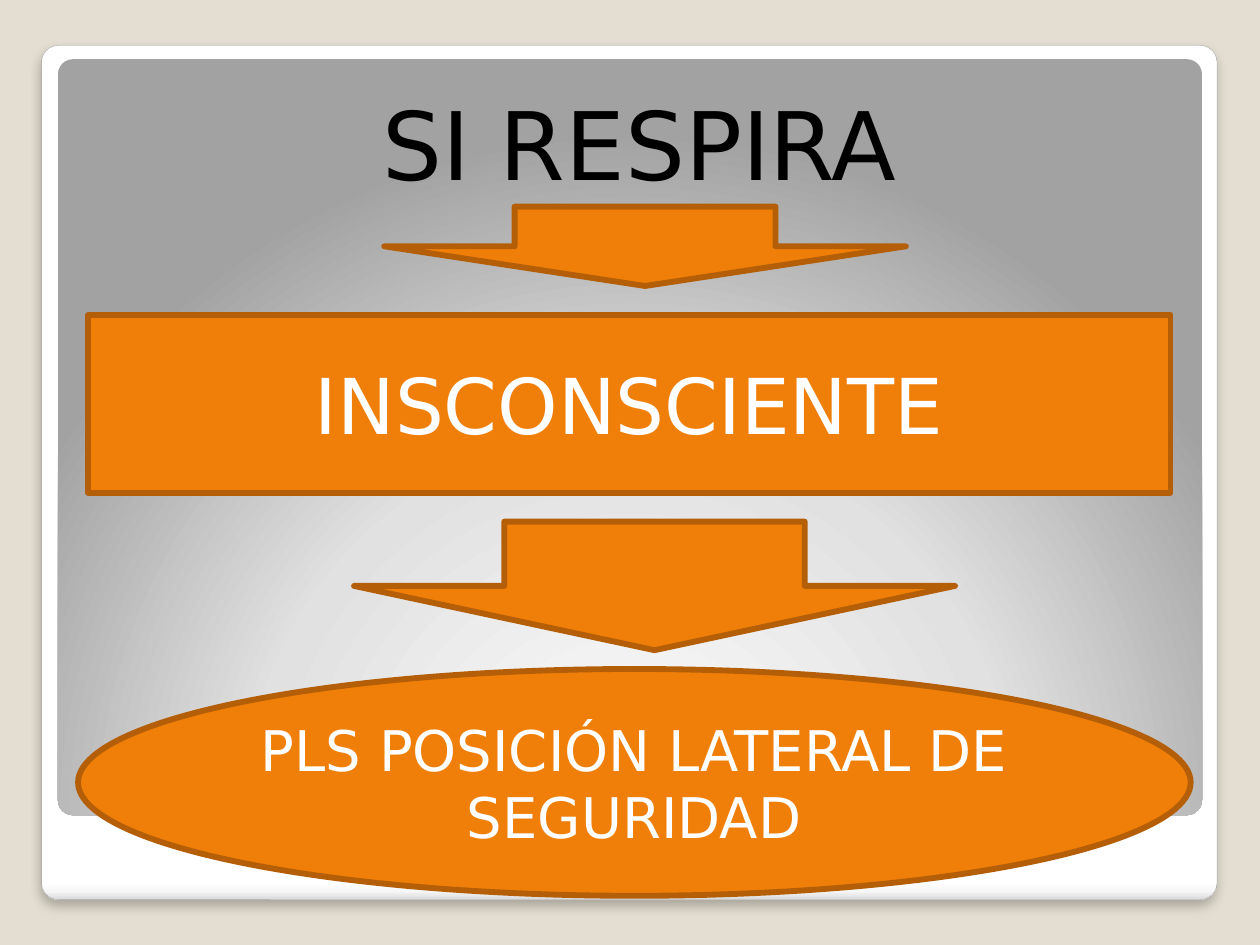
from dataclasses import dataclass

import lxml.etree
import pptx
import pptx.dml.color
import pptx.enum.shapes
import pptx.enum.text
import pptx.oxml
import pptx.oxml.ns
import pptx.util
from pptx.util import Inches

COLORS = {
    "background": "E3DED1",
    "orange": "F07F09",
    "orange_edge": "B45F07",
    "frame_edge": "A4A4A4",
    "black": "000000",
    "white": "FFFFFF",
}
FONT = "DejaVu Sans"
SHAPES = pptx.enum.shapes.MSO_SHAPE
ANCHORS = pptx.enum.text.MSO_ANCHOR


@dataclass
class Box:
    left: float
    top: float
    width: float
    height: float


@dataclass
class Step:
    preset: SHAPES
    box: Box
    text: str = ""
    size: int = 0


FRAME = Box(0.33, 0.36, 9.33, 6.78)
PANEL = Box(0.46, 0.47, 9.08, 6)
TITLE = Box(0.55, 0.58, 8.95, 4.58)
STEPS = [
    Step(SHAPES.DOWN_ARROW, Box(3.05, 1.64, 4.14, 0.63)),
    Step(SHAPES.RECTANGLE, Box(0.7, 2.5, 8.59, 1.41), "INSCONSCIENTE", 44),
    Step(SHAPES.DOWN_ARROW, Box(2.81, 4.14, 4.77, 1.02)),
    Step(SHAPES.OVAL, Box(0.62, 5.31, 8.83, 1.8), "PLS POSICIÓN LATERAL DE SEGURIDAD", 32),
]
FRAME_STOPS = [(0, "FFFFFF"), (98, "FFFFFF"), (99, "F7F7F7"), (100, "DADADA")]
PANEL_STOPS = [(0, "FFFFFF"), (55, "E1E1E1"), (100, "A2A2A2")]
DOWNWARD = '<a:lin ang="5400000" scaled="0"/>'
CIRCLE_FROM_BELOW = (
    '<a:path path="circle"><a:fillToRect l="50000" t="175000" r="50000" b="-75000"/></a:path>'
)
SOFT_SHADOW = (
    '<a:outerShdw blurRad="76200" dist="50800" dir="5400000" algn="tl" rotWithShape="0">'
    f'<a:srgbClr val="{COLORS["black"]}"><a:alpha val="25000"/></a:srgbClr></a:outerShdw>'
)


def color(name: str) -> pptx.dml.color.RGBColor:
    return pptx.dml.color.RGBColor.from_string(COLORS[name])


def drawing_element(tag: str, content: str, attributes: str = "") -> lxml.etree.ElementBase:
    namespace = pptx.oxml.ns.nsdecls("a")
    return pptx.oxml.parse_xml(f"<a:{tag} {namespace} {attributes}>{content}</a:{tag}>")


def place(box: Box) -> tuple:
    return Inches(box.left), Inches(box.top), Inches(box.width), Inches(box.height)


def write_text(shape, text: str, *, size: int, color_name: str, anchor=ANCHORS.MIDDLE,
               space_before: float = 0) -> None:
    frame = shape.text_frame
    frame.word_wrap = True
    frame.vertical_anchor = anchor
    paragraph = frame.paragraphs[0]
    paragraph.alignment = pptx.enum.text.PP_ALIGN.CENTER
    paragraph.space_before = pptx.util.Pt(space_before)
    run = paragraph.add_run()
    run.text = text
    run.font.name = FONT
    run.font.size = pptx.util.Pt(size)
    run.font.color.rgb = color(color_name)


def add_shape(slide, preset: SHAPES, box: Box):
    shape = slide.shapes.add_shape(preset, *place(box))
    shape.shadow.inherit = False
    return shape


def add_card(slide, box: Box, stops: list[tuple[int, str]], direction: str):
    """Add a rounded card with a gradient fill and no outline."""
    shape = add_shape(slide, SHAPES.ROUNDED_RECTANGLE, box)
    shape.adjustments[0] = 0.02
    shape.line.fill.background()
    shape.fill.background()
    stop_list = "".join(
        f'<a:gs pos="{position * 1000}"><a:srgbClr val="{value}"/></a:gs>'
        for position, value in stops
    )
    gradient = drawing_element(
        "gradFill", f"<a:gsLst>{stop_list}</a:gsLst>{direction}", 'rotWithShape="1"')
    properties = shape.element.spPr
    properties.replace(properties.find(pptx.oxml.ns.qn("a:noFill")), gradient)
    return shape


def add_step(slide, step: Step) -> None:
    shape = add_shape(slide, step.preset, step.box)
    shape.fill.solid()
    shape.fill.fore_color.rgb = color("orange")
    shape.line.color.rgb = color("orange_edge")
    shape.line.width = pptx.util.Pt(3.35)
    if step.text:
        write_text(shape, step.text, size=step.size, color_name="white")


def main() -> None:
    presentation = pptx.Presentation()
    presentation.slide_width = Inches(10)
    presentation.slide_height = Inches(7.5)
    slide = presentation.slides.add_slide(presentation.slide_layouts[6])
    slide.background.fill.solid()
    slide.background.fill.fore_color.rgb = color("background")

    # White frame with a soft shadow, and the grey panel inside it
    frame = add_card(slide, FRAME, FRAME_STOPS, DOWNWARD)
    frame.line.color.rgb = color("frame_edge")
    frame.line.width = pptx.util.Pt(0.16)
    effects = frame.element.spPr.find(pptx.oxml.ns.qn("a:effectLst"))
    effects.getparent().replace(effects, drawing_element("effectLst", SOFT_SHADOW))
    add_card(slide, PANEL, PANEL_STOPS, CIRCLE_FROM_BELOW)

    # Title
    title = slide.shapes.add_textbox(*place(TITLE))
    title.text_frame.margin_left = Inches(0.2)
    title.text_frame.margin_top = Inches(0.1)
    write_text(title, "SI RESPIRA", size=54, color_name="black",
               anchor=ANCHORS.TOP, space_before=2.5)

    # Flow from top to bottom
    for step in STEPS:
        add_step(slide, step)

    presentation.save("out.pptx")


if __name__ == "__main__":
    main()
